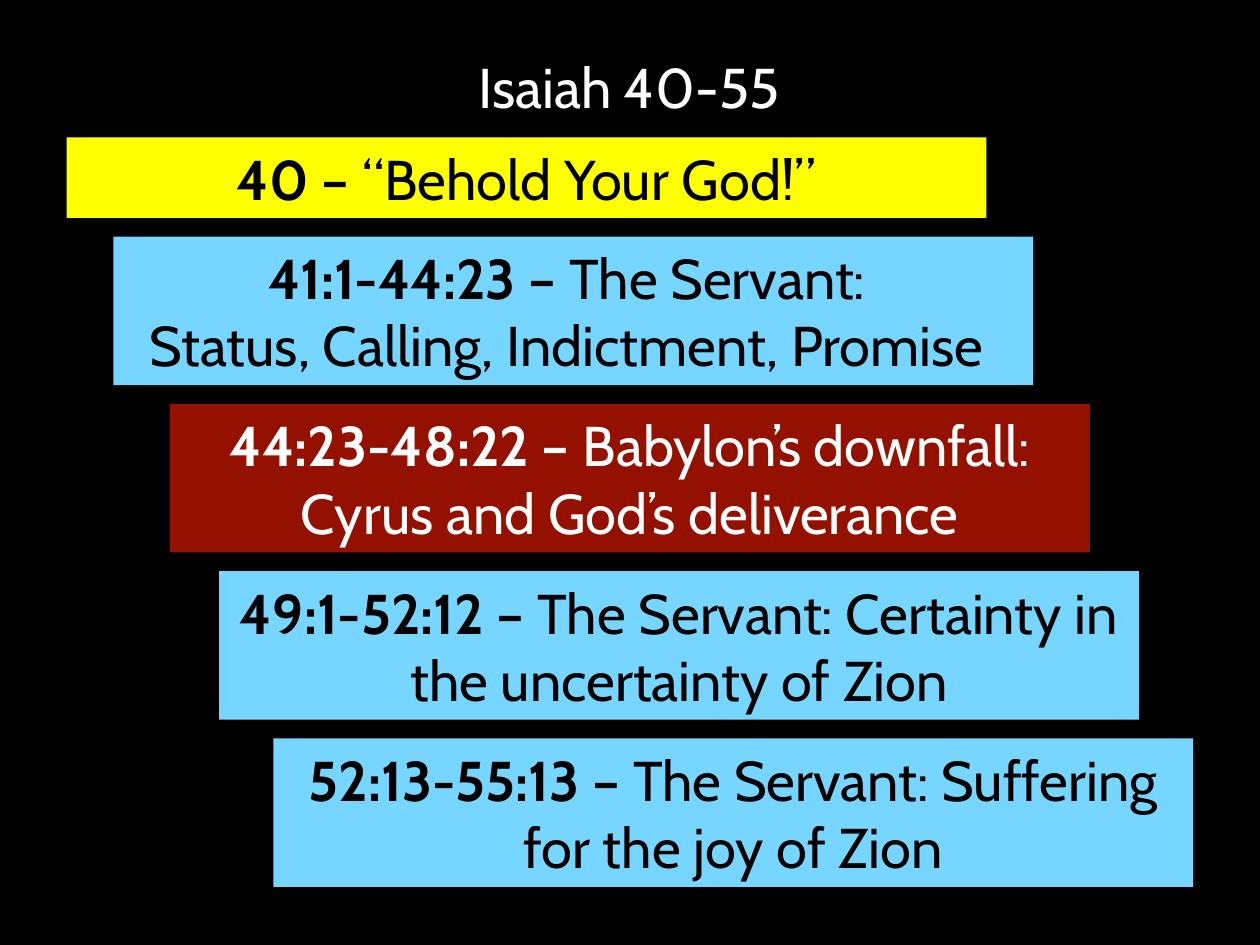
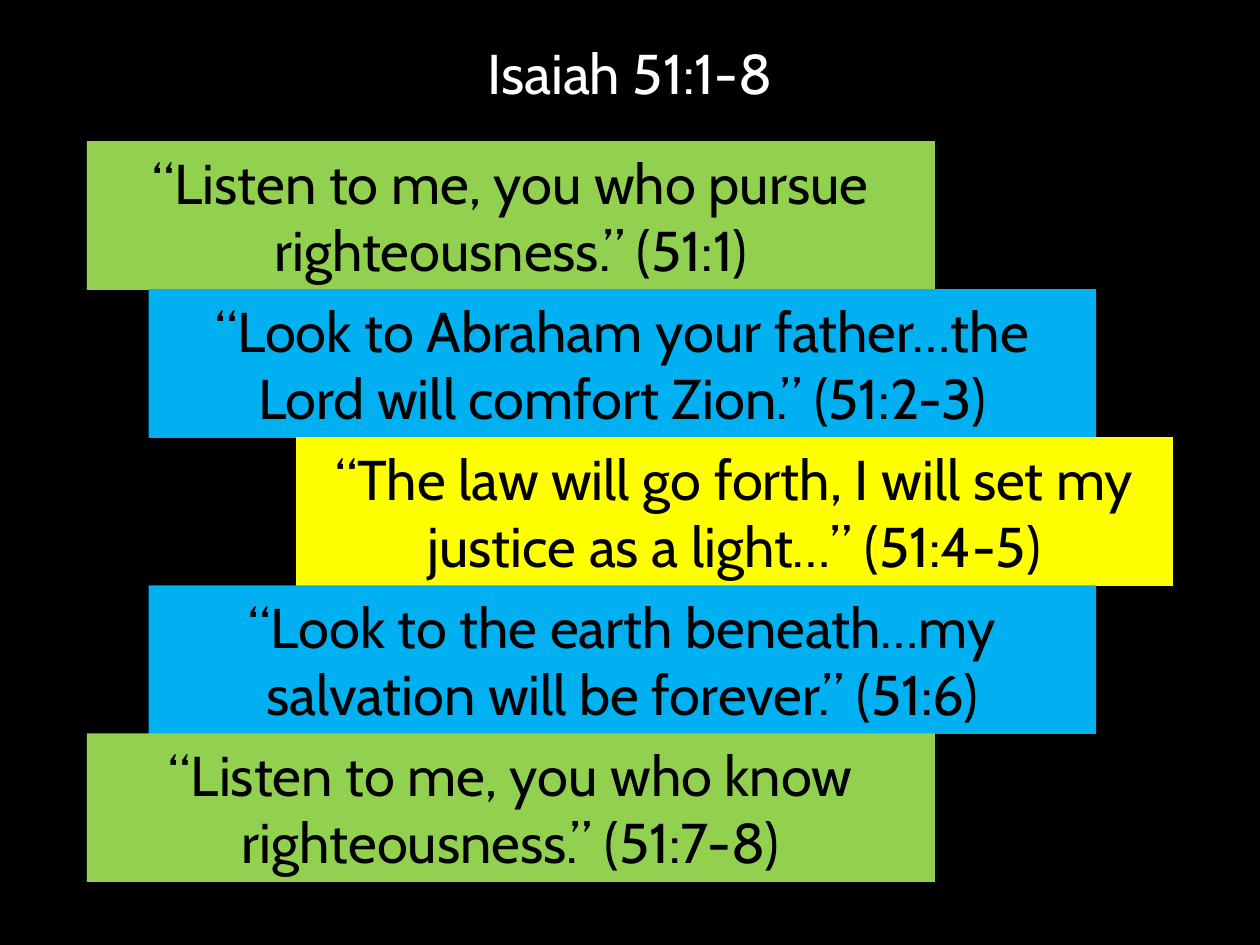
import pptx
import pptx.util
import pptx.dml.color
import pptx.enum.shapes
import pptx.enum.text

Inches = pptx.util.Inches

COLORS = {
    "black": "000000",
    "white": "FFFFFF",
    "yellow": "FFFF00",
    "sky": "76D6FF",
    "crimson": "941100",
    "green": "92D050",
    "blue": "00B0F0",
}
FONT = "Cabin"
TEXT_SIZE = 32
ONE_LINE = 0.64
TWO_LINES = 1.18

OUTLINE = [
    (0, 7.3, ONE_LINE, "yellow", "black", [("40 – ", "“Behold Your God!”")]),
    (0.37, 7.3, TWO_LINES, "sky", "black",
     [("41:1-44:23 – ", "The Servant: "),
      ("", "Status, Calling, Indictment, Promise ")]),
    (0.82, 7.3, TWO_LINES, "crimson", "white",
     [("44:23-48:22 – ", "Babylon’s downfall: Cyrus and God’s deliverance")]),
    (1.21, 7.3, TWO_LINES, "sky", "black",
     [("49:1-52:12 – ", "The Servant: Certainty in the uncertainty of Zion")]),
    (1.64, 7.3, TWO_LINES, "sky", "black",
     [("52:13-55:13 – ", "The Servant: Suffering for the joy of Zion")]),
]

LEVELS = {
    "listen": (0, 6.73, TWO_LINES, "green", "black"),
    "look": (0.49, 7.52, TWO_LINES, "blue", "black"),
    "law": (1.66, 6.96, TWO_LINES, "yellow", "black"),
}
VERSES = [
    ("listen", "“Listen to me, you who pursue righteousness.” (51:1)"),
    ("look", "“Look to Abraham your father…the Lord will comfort Zion.” (51:2-3)"),
    ("law", "“The law will go forth, I will set my justice as a light…” (51:4-5)"),
    ("look", "“Look to the earth beneath…my salvation will be forever.” (51:6)"),
    ("listen", "“Listen to me, you who know righteousness.” (51:7-8)"),
]
CHIASM = [(*LEVELS[level], [("", verse)]) for level, verse in VERSES]


def rgb(name):
    return pptx.dml.color.RGBColor.from_string(COLORS[name])


def write(frame, paragraphs, color="black", line_spacing=None):
    frame.word_wrap = True
    frame.vertical_anchor = pptx.enum.text.MSO_ANCHOR.MIDDLE
    for index, (reference, wording) in enumerate(paragraphs):
        paragraph = frame.paragraphs[0] if index == 0 else frame.add_paragraph()
        paragraph.alignment = pptx.enum.text.PP_ALIGN.CENTER
        if line_spacing:
            paragraph.line_spacing = line_spacing
        for text, bold in ((reference, True), (wording, False)):
            if text:
                run = paragraph.add_run()
                run.text = text
                run.font.name = FONT
                run.font.size = pptx.util.Pt(TEXT_SIZE)
                run.font.bold = bold
                run.font.color.rgb = rgb(color)


def add_heading(slide, box, text):
    heading = slide.shapes.add_textbox(*map(Inches, box))
    write(heading.text_frame, [("", text)], color="white", line_spacing=0.9)


def add_band(slide, box, fill, color, paragraphs):
    band = slide.shapes.add_shape(
        pptx.enum.shapes.MSO_SHAPE.RECTANGLE, *map(Inches, box))
    band.shadow.inherit = False
    band.fill.solid()
    band.fill.fore_color.rgb = rgb(fill)
    band.line.fill.background()
    write(band.text_frame, paragraphs, color=color)


def add_staircase(slide, box, bands):
    left, top, height = box
    gap = (height - sum(band[2] for band in bands)) / (len(bands) - 1)
    for indent, width, band_height, fill, color, paragraphs in bands:
        add_band(slide, (left + indent, top, width, band_height),
                 fill, color, paragraphs)
        top += band_height + gap


def add_outline_slide(deck, heading, heading_box, bands, bands_box):
    slide = deck.slides.add_slide(deck.slide_layouts[6])
    slide.background.fill.solid()
    slide.background.fill.fore_color.rgb = rgb("black")
    add_heading(slide, heading_box, heading)
    add_staircase(slide, bands_box, bands)


def main():
    deck = pptx.Presentation()
    deck.slide_width = Inches(10)
    deck.slide_height = Inches(7.5)
    add_outline_slide(deck, "Isaiah 40-55", (0.53, 0.4, 8.93, 0.63),
                      OUTLINE, (0.53, 1.09, 5.95))
    add_outline_slide(deck, "Isaiah 51:1-8", (0.69, 0.28, 8.62, 0.66),
                      CHIASM, (0.69, 1.12, 5.88))
    deck.save("out.pptx")


if __name__ == "__main__":
    main()
